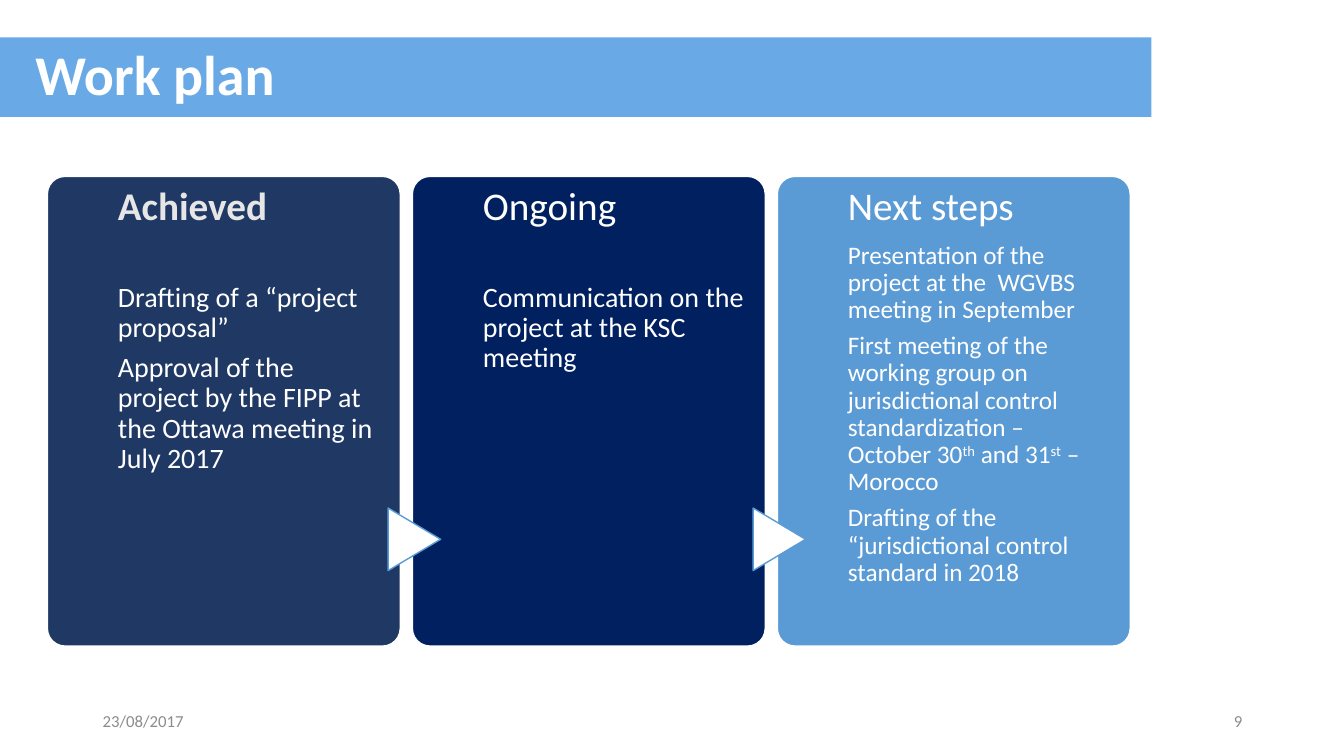
from pptx import Presentation
from pptx.dml.color import RGBColor
from pptx.enum.shapes import MSO_SHAPE
from pptx.enum.text import MSO_ANCHOR, MSO_AUTO_SIZE, PP_ALIGN
from pptx.util import Emu, Pt

ROUNDED, EXTRACT = MSO_SHAPE.ROUNDED_RECTANGLE, MSO_SHAPE.FLOWCHART_EXTRACT
TOP, MIDDLE = MSO_ANCHOR.TOP, MSO_ANCHOR.MIDDLE
LEFT, RIGHT = PP_ALIGN.LEFT, PP_ALIGN.RIGHT
NO_FIT = MSO_AUTO_SIZE.NONE
TITLE_ONLY = 5

WHITE, GREY, BLUE = "FFFFFF", "8C8C8C", "5B9BD5"
CARD_LEFT, CARD_TOP, CARD_WIDTH, CARD_HEIGHT, CARD_PITCH = 47, 175, 350, 466, 362
HEADING_SIZE = 28
BLANK_LINE = 29  # points between a heading and text that starts lower

# heading, heading format, fill, text size, extra gap, paragraphs
# (a paragraph alternates normal and superscript parts)
CARDS = [
    ("Achieved", {"color": "E7E6E6", "bold": True}, "203864", 20, BLANK_LINE, [
        ["Drafting of a “project proposal”"],
        ["Approval of the project by the FIPP at the Ottawa meeting in July 2017"],
    ]),
    ("Ongoing", {}, "002060", 20, BLANK_LINE, [
        ["Communication on the project at the KSC meeting"],
    ]),
    ("Next steps", {}, BLUE, 18, 0, [
        ["Presentation of the project at the  WGVBS meeting in September"],
        ["First meeting of the working group on jurisdictional control "
         "standardization – October 30", "th", " and 31", "st", " – Morocco"],
        ["Drafting of the “jurisdictional control standard in 2018"],
    ]),
]


def px(n):
    """Convert a length at 100 px to the inch into EMU."""
    return Emu(n * 9144)


def rgb(color):
    return RGBColor.from_string(color)


def add_run(p, text, size=18, color=WHITE, bold=False, superscript=False, font="Calibri"):
    r = p.add_run()
    r.text = text
    r.font.name = font
    r.font.size = Pt(size)
    r.font.bold = bold
    r.font.color.rgb = rgb(color)
    if superscript:
        r.font._element.set("baseline", "30000")
    return r


class SlideBuilder:
    def __init__(self, prs):
        self.s = prs.slides.add_slide(prs.slide_layouts[TITLE_ONLY])

    def frame(self, sp, insets, anchor):
        tf = sp.text_frame
        tf.word_wrap = True
        tf.auto_size = NO_FIT
        tf.vertical_anchor = anchor
        tf.margin_left, tf.margin_top, tf.margin_right, tf.margin_bottom = map(px, insets)
        return tf

    def title(self, text, x, y, w, h, fill):
        sp = self.s.shapes.title
        sp.left, sp.top, sp.width, sp.height = map(px, (x, y, w, h))
        sp.fill.solid()
        sp.fill.fore_color.rgb = rgb(fill)
        p = self.frame(sp, (35, 5, 10, 5), MIDDLE).paragraphs[0]
        p.alignment = LEFT
        p.line_spacing = 0.9
        add_run(p, text, size=40, bold=True)

    def shape(self, kind, x, y, w, h, fill, line):
        sp = self.s.shapes.add_shape(kind, *map(px, (x, y, w, h)))
        sp.shadow.inherit = False
        sp.fill.solid()
        sp.fill.fore_color.rgb = rgb(fill)
        sp.line.color.rgb = rgb(line)
        sp.line.width = Pt(1)
        return sp

    def textbox(self, x, y, w, h, insets=(10, 5, 10, 5), anchor=MIDDLE):
        sp = self.s.shapes.add_textbox(*map(px, (x, y, w, h)))
        return self.frame(sp, insets, anchor)

    def footer(self, text, x, align):
        p = self.textbox(x, 695, 300, 40).paragraphs[0]
        p.alignment = align
        add_run(p, text, size=12, color=GREY)

    def card(self, x, fill):
        sp = self.shape(ROUNDED, x, CARD_TOP, CARD_WIDTH, CARD_HEIGHT, fill, WHITE)
        sp.adjustments[0] = 0.05

    def arrow(self, card_x):
        """Point from the previous card into the one at card_x."""
        sp = self.shape(EXTRACT, card_x - 29, 509, 62, 52, WHITE, BLUE)
        sp.rotation = 90

    def card_text(self, x, heading, heading_format, size, gap, paragraphs):
        tf = self.textbox(x + 70, CARD_TOP, 260, CARD_HEIGHT, (0, 10, 0, 0), TOP)
        p = tf.paragraphs[0]
        p.line_spacing = 0.9
        p.space_after = Pt(0.35 * HEADING_SIZE + gap)
        add_run(p, heading, size=HEADING_SIZE, **heading_format)
        for parts in paragraphs:
            p = tf.add_paragraph()
            p.line_spacing = 0.9
            p.space_after = Pt(0.35 * size)
            for i, part in enumerate(parts):
                add_run(p, part, size=size, superscript=i % 2 == 1)


def main():
    prs = Presentation()
    prs.slide_width, prs.slide_height = px(1333), px(750)
    slide = SlideBuilder(prs)
    slide.title("Work plan", 0, 37, 1142, 79, "69AAE6")
    slide.footer("23/08/2017", 92, LEFT)
    slide.footer("9", 942, RIGHT)
    for i, (heading, heading_format, fill, size, gap, paragraphs) in enumerate(CARDS):
        x = CARD_LEFT + i * CARD_PITCH
        slide.card(x, fill)
        if i:
            slide.arrow(x)
        slide.card_text(x, heading, heading_format, size, gap, paragraphs)
    prs.save("out.pptx")


if __name__ == "__main__":
    main()
